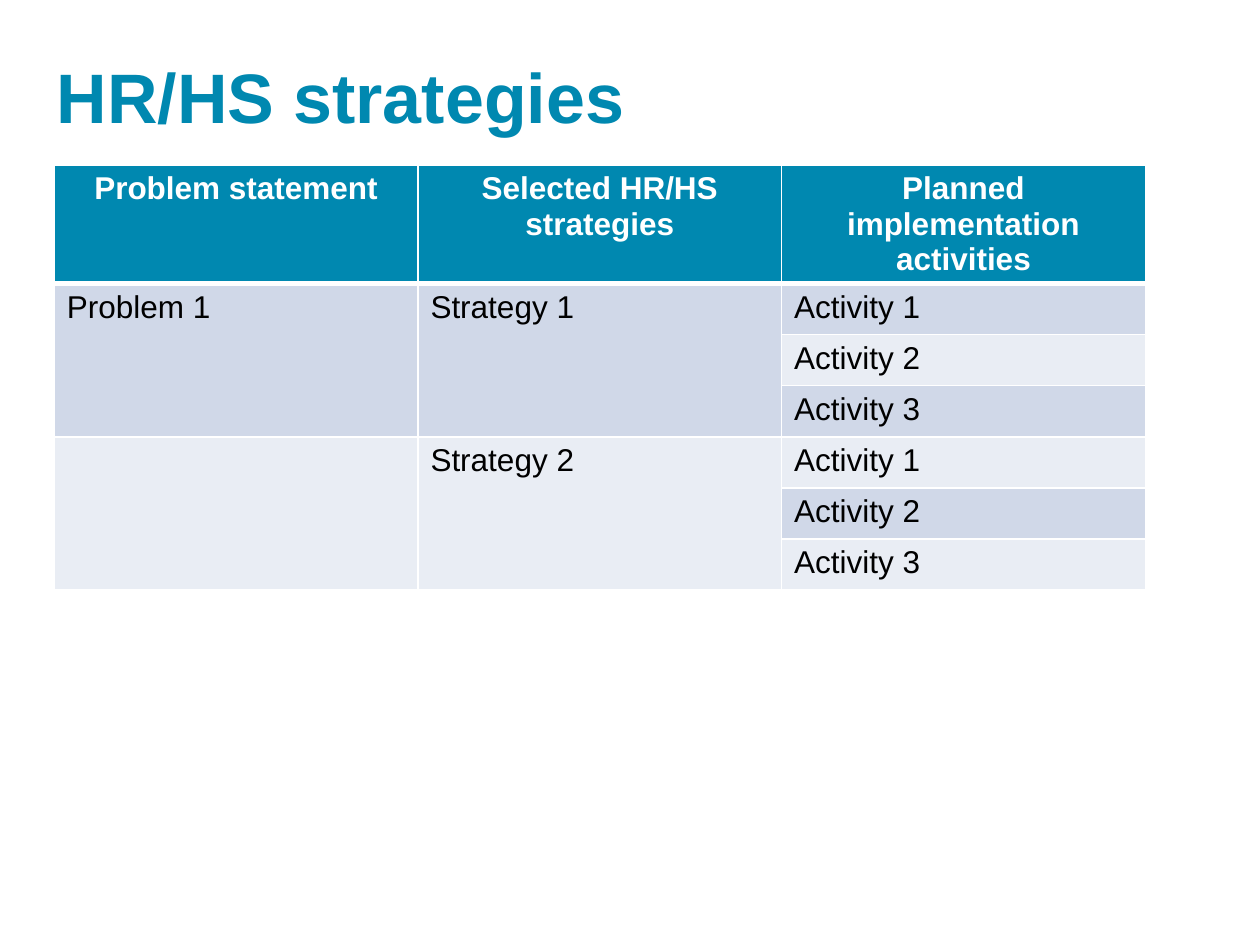
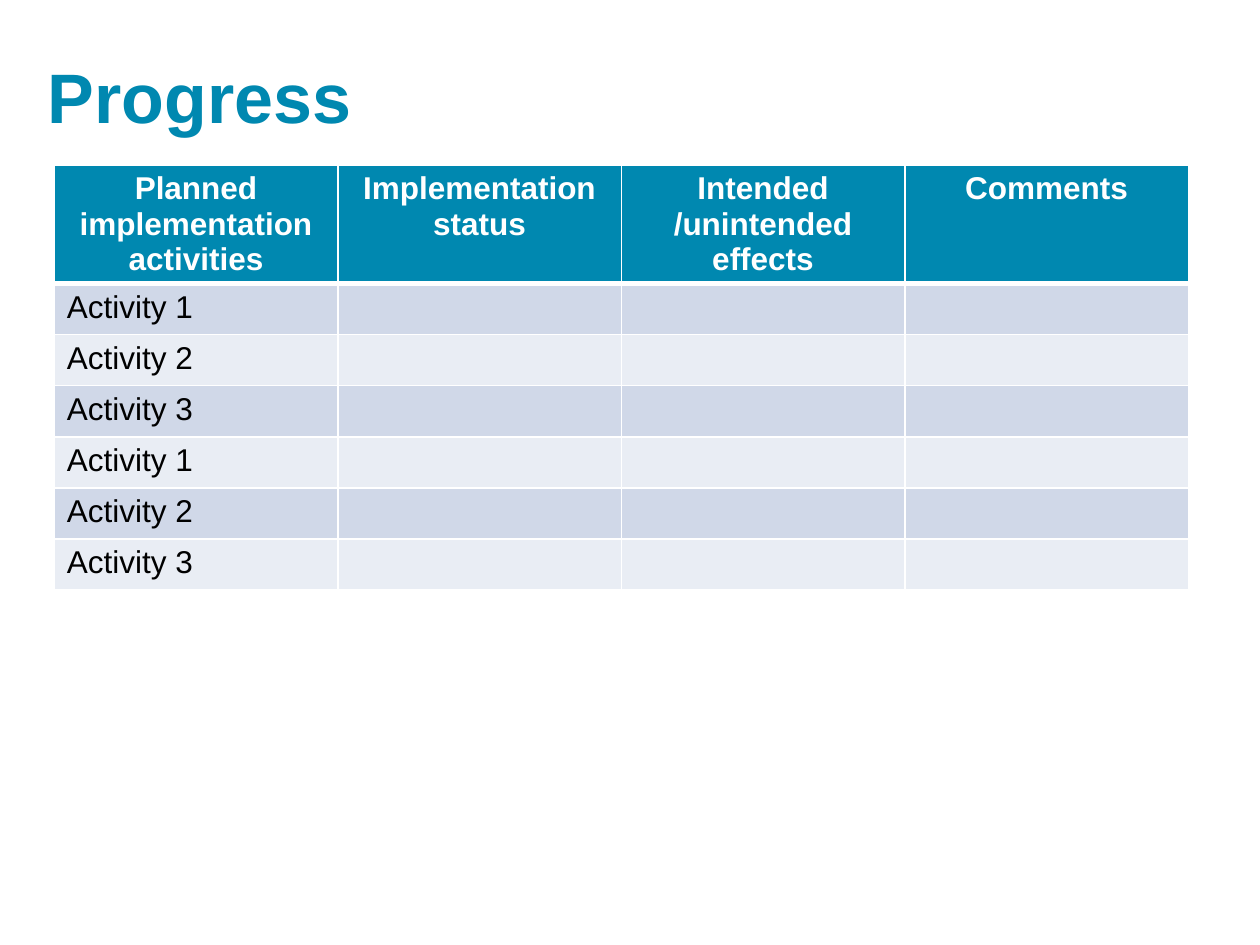
import pptx
import pptx.util
import pptx.dml.color
import pptx.enum.text
import pptx.oxml
import pptx.oxml.ns
from dataclasses import dataclass

Pt = pptx.util.Pt
Align = pptx.enum.text.PP_ALIGN
Anchor = pptx.enum.text.MSO_ANCHOR


@dataclass(frozen=True)
class Theme:
    font: str = "Arial"
    teal: str = "0088B0"
    white: str = "FFFFFF"
    black: str = "000000"
    bands: tuple = ("D0D8E8", "E9EDF4")
    title: int = 40
    body: int = 18
    thin: int = 1
    thick: int = 3


theme = Theme()
up = None
acts = ["Activity 1", "Activity 2", "Activity 3"] * 2

pages = [
    {
        "title": "HR/HS strategies",
        "left": 25.2,
        "width": 623.5,
        "heads": ["Problem statement", "Selected HR/HS strategies",
                  "Planned implementation activities"],
        "rows": list(zip(["Problem 1", up, up, "", up, up],
                         ["Strategy 1", up, up, "Strategy 2", up, up], acts)),
    },
    {
        "title": "Progress",
        "left": 20.2,
        "width": 648,
        "heads": ["Planned implementation activities", "Implementation status",
                  "Intended /unintended effects", "Comments"],
        "rows": [(act, "", "", "") for act in acts],
    },
]

title_top, title_wide, title_high = 20.9, 648, 67
grid_left, grid_top = 31, 94.3
head_high, row_high = 67.4, 29.2


def rgb(code):
    return pptx.dml.color.RGBColor.from_string(code)


def write(frame, text, size=theme.body, color=theme.black, bold=False,
          align=Align.LEFT):
    para = frame.paragraphs[0]
    para.alignment = align
    if not text:
        return
    run = para.add_run()
    run.text = text
    font = run.font
    font.name, font.size, font.bold = theme.font, Pt(size), bold
    font.color.rgb = rgb(color)


def edge(cell, **sides):
    props = cell._tc.get_or_add_tcPr()
    for side in "LRTB":
        wide = Pt(sides.get(side, theme.thin))
        props.append(pptx.oxml.parse_xml(
            f'<a:ln{side} {pptx.oxml.ns.nsdecls("a")} w="{wide}"><a:solidFill>'
            f'<a:srgbClr val="{theme.white}"/></a:solidFill></a:ln{side}>'))


def paint(cell, color):
    cell.fill.solid()
    cell.fill.fore_color.rgb = rgb(color)


def add_title(slide, text, left):
    box = slide.shapes.title
    box.left, box.top = Pt(left), Pt(title_top)
    box.width, box.height = Pt(title_wide), Pt(title_high)
    box.text_frame.vertical_anchor = Anchor.MIDDLE
    write(box.text_frame, text, size=theme.title, color=theme.teal, bold=True)


def add_grid(slide, heads, rows, width):
    high = head_high + row_high * len(rows)
    grid = slide.shapes.add_table(len(rows) + 1, len(heads), Pt(grid_left),
                                  Pt(grid_top), Pt(width), Pt(high)).table
    for col in grid.columns:
        col.width = Pt(width / len(heads))
    for row in grid.rows:
        row.height = Pt(row_high)
    grid.rows[0].height = Pt(head_high)

    for c, head in enumerate(heads):
        cell = grid.cell(0, c)
        edge(cell, B=theme.thick)
        paint(cell, theme.teal)
        write(cell.text_frame, head, color=theme.white, bold=True,
              align=Align.CENTER)
        start = 1
        for r, row in enumerate(rows, 1):
            cell = grid.cell(r, c)
            edge(cell, T=theme.thick if r == 1 else theme.thin)
            paint(cell, theme.bands[(r - 1) % 2])
            if row[c] is not up:
                start = r
                write(cell.text_frame, row[c])
            elif r == len(rows) or rows[r][c] is not up:
                grid.cell(start, c).merge(cell)


def main():
    deck = pptx.Presentation()
    deck.slide_width, deck.slide_height = Pt(720), Pt(540)
    for page in pages:
        slide = deck.slides.add_slide(deck.slide_layouts[5])
        add_title(slide, page["title"], page["left"])
        add_grid(slide, page["heads"], page["rows"], page["width"])
    deck.save("out.pptx")


if __name__ == "__main__":
    main()
